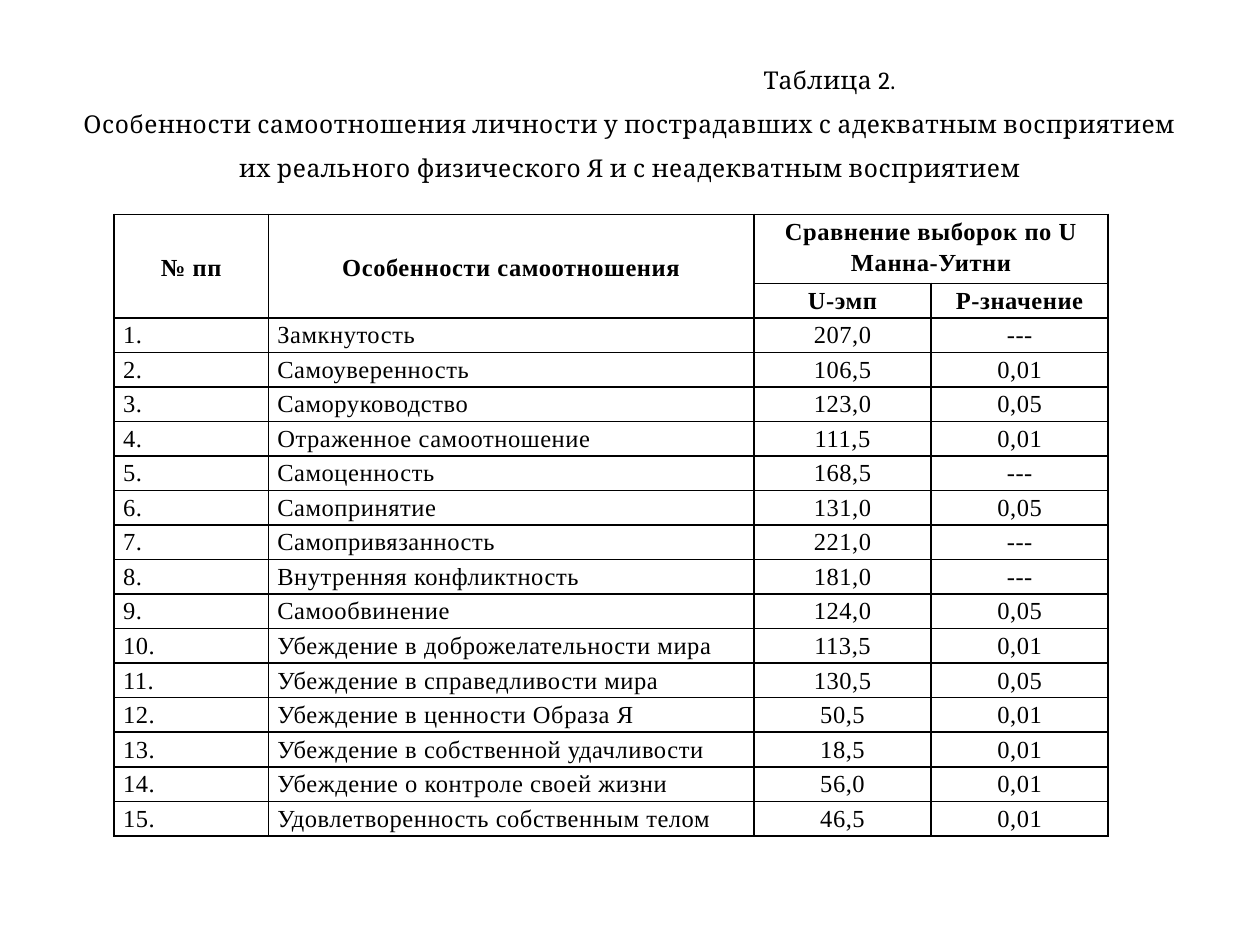
from copy import deepcopy

from lxml import etree
from pptx import Presentation
from pptx import util as u
from pptx.dml import color
from pptx.enum import text
from pptx.oxml import ns

BLACK = "000000"
CENTER = text.PP_ALIGN.CENTER
JUSTIFY = text.PP_ALIGN.JUSTIFY
MIDDLE = text.MSO_ANCHOR.MIDDLE
TOP = text.MSO_ANCHOR.TOP

CAPTION_FONT = {"name": "Cambria", "size": u.Pt(14), "bold": False}
BODY_FONT = {"name": "Times New Roman", "size": u.Pt(14), "bold": False}
HEADING_FONT = {**BODY_FONT, "bold": True}

HEADINGS = [
    (0, 0, 1, 0, "№ пп", MIDDLE),
    (0, 1, 1, 1, "Особенности самоотношения", MIDDLE),
    (0, 2, 0, 3, "Сравнение выборок по U Манна-Уитни", TOP),
    (1, 2, 1, 2, "U-эмп", TOP),
    (1, 3, 1, 3, "Р-значение", TOP),
]
FEATURES = [
    ("Замкнутость", "207,0", "---"),
    ("Самоуверенность", "106,5", "0,01"),
    ("Саморуководство", "123,0", "0,05"),
    ("Отраженное самоотношение", "111,5", "0,01"),
    ("Самоценность", "168,5", "---"),
    ("Самопринятие", "131,0", "0,05"),
    ("Самопривязанность", "221,0", "---"),
    ("Внутренняя конфликтность", "181,0", "---"),
    ("Самообвинение", "124,0", "0,05"),
    ("Убеждение в доброжелательности мира", "113,5", "0,01"),
    ("Убеждение в справедливости мира", "130,5", "0,05"),
    ("Убеждение в ценности Образа Я", "50,5", "0,01"),
    ("Убеждение в собственной удачливости", "18,5", "0,01"),
    ("Убеждение о контроле своей жизни", "56,0", "0,01"),
    ("Удовлетворенность собственным телом", "46,5", "0,01"),
]


def assign(target, values):
    for key, value in values.items():
        setattr(target, key, value)


def paint(target, hex_color):
    target.rgb = color.RGBColor.from_string(hex_color)


def write(paragraph, wording, font, align, spacing):
    assign(paragraph, {"alignment": align, "line_spacing": spacing,
                       "space_before": u.Pt(0)})
    run = paragraph.add_run()
    run.text = wording
    assign(run.font, font)
    paint(run.font.color, BLACK)
    properties = run._r.get_or_add_rPr()
    properties.set("spc", "30")
    return properties


def border(cell):
    properties = cell._tc.get_or_add_tcPr()
    for side in ("lnL", "lnR", "lnT", "lnB"):
        line = etree.SubElement(properties, ns.qn(f"a:{side}"), w=str(u.Pt(1)))
        fill = etree.SubElement(line, ns.qn("a:solidFill"))
        etree.SubElement(fill, ns.qn("a:srgbClr"), val=BLACK)


def fill_cell(cell, wording, font, align, anchor=TOP):
    assign(cell, {"margin_left": u.Cm(0.18), "margin_right": u.Cm(0.18),
                  "margin_top": 0, "margin_bottom": 0,
                  "vertical_anchor": anchor})
    write(cell.text_frame.paragraphs[0], wording, font, align, 1.15)


def add_caption(slide, left, top, width, height):
    caption = slide.shapes.title
    assign(caption, {"left": left, "top": top, "width": width, "height": height})
    frame = caption.text_frame
    assign(frame, {"word_wrap": True, "auto_size": text.MSO_AUTO_SIZE.NONE,
                   "vertical_anchor": MIDDLE})
    heading = frame.paragraphs[0]
    indents = heading._p.get_or_add_pPr()
    indents.set("marL", "0")
    indents.set("indent", str(u.Cm(8.06)))
    number_format = write(heading, "Таблица 2.", CAPTION_FONT, CENTER, 1.5)
    heading.add_line_break()
    heading._p.find(ns.qn("a:br")).append(deepcopy(number_format))
    write(heading,
          "Особенности самоотношения личности у пострадавших с адекватным "
          "восприятием их реального физического Я и с неадекватным восприятием",
          CAPTION_FONT, CENTER, 1.5)


def add_comparison(slide, left, top, width, height):
    comparison = slide.shapes.add_table(
        len(FEATURES) + 2, 4, left, top, width, height).table
    assign(comparison, {"first_row": False, "horz_banding": False})
    shares = (3.11, 9.79, 3.57, 3.57)
    for column, share in zip(comparison.columns, shares):
        column.width = int(width * share / sum(shares))
    unit = height // (len(FEATURES) + 3)
    for index, row in enumerate(comparison.rows):
        row.height = unit * 2 if index == 0 else unit
    for cell in comparison.iter_cells():
        border(cell)
        cell.fill.background()
    for row, column, last_row, last_column, wording, anchor in HEADINGS:
        cell = comparison.cell(row, column)
        if (row, column) != (last_row, last_column):
            cell.merge(comparison.cell(last_row, last_column))
        fill_cell(cell, wording, HEADING_FONT, CENTER, anchor)
    for number, feature in enumerate(FEATURES, 1):
        for column, wording in enumerate((f"{number}.", *feature)):
            fill_cell(comparison.cell(number + 1, column), wording, BODY_FONT,
                      JUSTIFY if column < 2 else CENTER)


def main():
    deck = Presentation()
    assign(deck, {"slide_width": u.Cm(25.4), "slide_height": u.Cm(19.05)})
    slide = deck.slides.add_slide(deck.slide_layouts[5])
    add_caption(slide, u.Cm(1.27), u.Cm(0.76), u.Cm(22.86), u.Cm(3.18))
    add_comparison(slide, u.Cm(2.3), u.Cm(4.32), u.Cm(20.04), u.Cm(12.54))
    deck.save("out.pptx")


if __name__ == "__main__":
    main()
